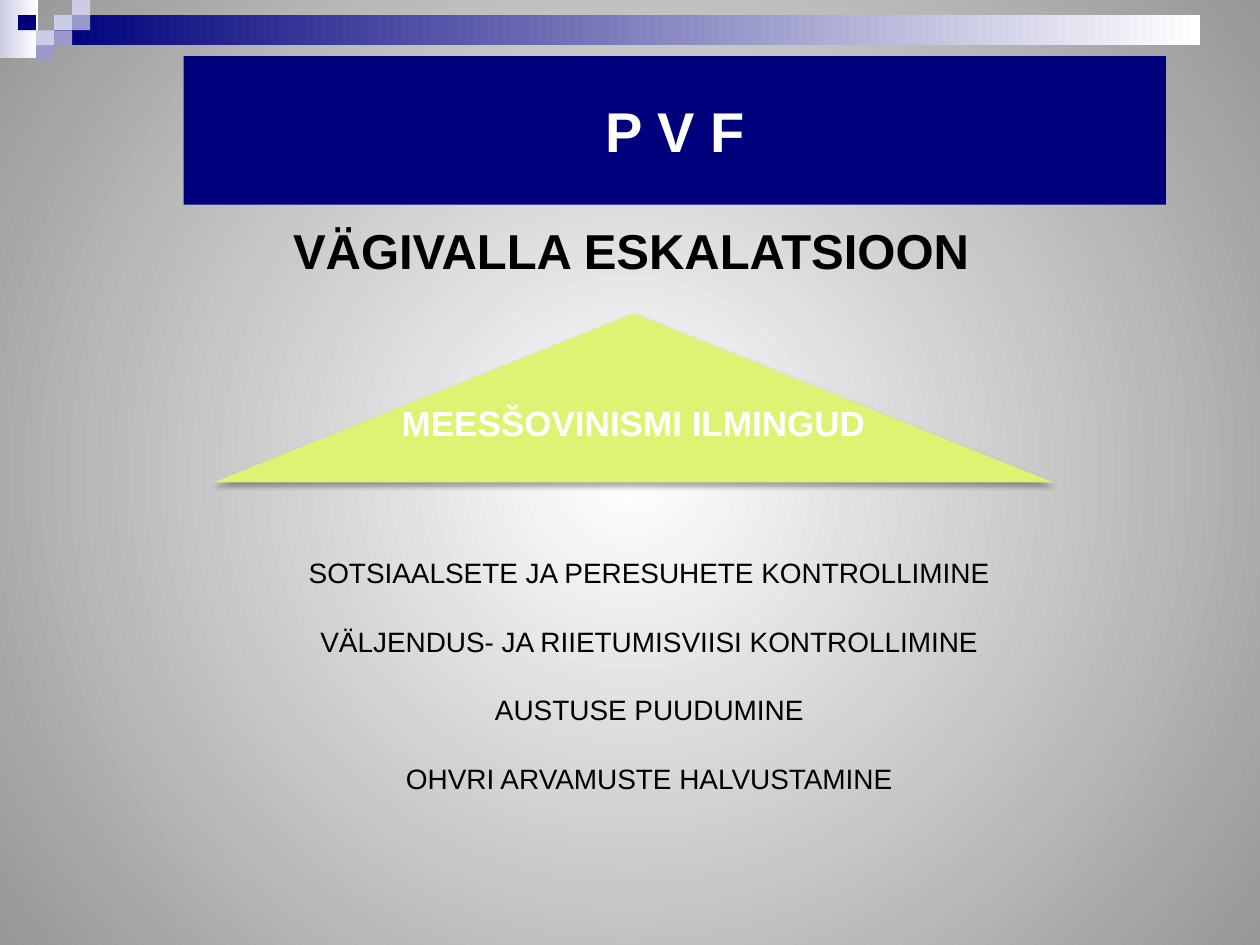
from dataclasses import dataclass

from lxml.etree import SubElement
from pptx import Presentation
from pptx.dml.color import RGBColor
from pptx.enum.shapes import MSO_SHAPE as Preset
from pptx.enum.text import MSO_ANCHOR as Anchor, PP_ALIGN as Align
from pptx.oxml.ns import qn
from pptx.util import Pt


@dataclass(frozen=True)
class Theme:
    font: str = "Arial"
    navy: str = "00007D"
    violet: str = "9999CC"
    lavender: str = "CCCCE6"
    lime: str = "DEF373"
    white: str = "FFFFFF"
    black: str = "000000"
    gray: str = "979797"
    title_size: float = 32
    subtitle_size: float = 28
    label_size: float = 20
    body_size: float = 16


@dataclass(frozen=True)
class Box:
    left: float
    top: float
    width: float
    height: float

    def lengths(self) -> tuple:
        return tuple(Pt(v) for v in (self.left, self.top, self.width, self.height))


@dataclass(frozen=True)
class Square:
    column: int
    row: int
    color: str


@dataclass(frozen=True)
class TextStyle:
    size: float
    color: str
    bold: bool = False
    anchor: Anchor = Anchor.TOP
    gap: float = 0
    top_inset: float = 3.6


THEME = Theme()
SLIDE_WIDTH, SLIDE_HEIGHT = 720, 540
SQUARE_WIDTH, SQUARE_HEIGHT = 10.3, 8.64

CORNER_BAND = Box(0, 0, 21.6, 33.1)
TOP_BAND = Box(31, 8.64, 655, 17.28)
SQUARES = (
    Square(3, 1, THEME.lavender),
    Square(4, 0, THEME.lavender),
    Square(4, 1, THEME.violet),
    Square(2, 2, THEME.lavender),
    Square(1, 1, THEME.navy),
    Square(3, 2, THEME.violet),
    Square(2, 3, THEME.violet),
)

TITLE_BOX = Box(105, 32, 561.3, 85)
SUBTITLE_BOX = Box(36.6, 122.4, 648, 46)
PYRAMID_BOX = Box(122, 179.2, 480, 96.5)
SIGNS_BOX = Box(127.4, 314, 487.4, 143.3)
SIGNS = (
    "SOTSIAALSETE JA PERESUHETE KONTROLLIMINE",
    "VÄLJENDUS- JA RIIETUMISVIISI KONTROLLIMINE",
    "AUSTUSE PUUDUMINE",
    "OHVRI ARVAMUSTE HALVUSTAMINE",
)


def rgb(color: str) -> RGBColor:
    return RGBColor.from_string(color)


def set_gradient(fill, start: str, end: str) -> None:
    fill.gradient()
    fill.gradient_angle = 0
    for stop, color, position in zip(fill.gradient_stops, (start, end), (0, 1)):
        stop.color.rgb = rgb(color)
        stop.position = position


def set_background(slide) -> None:
    """Radial gradient, lightest at the centre of the slide."""
    set_gradient(slide.background.fill, THEME.white, THEME.gray)
    gradient = slide.element.find(".//" + qn("a:gradFill"))
    gradient.remove(gradient.find(qn("a:lin")))
    circle = SubElement(gradient, qn("a:path"), {"path": "circle"})
    SubElement(circle, qn("a:fillToRect"), dict.fromkeys("ltrb", "50000"))


def add_shape(slide, box: Box, color: str, preset: Preset = Preset.RECTANGLE):
    shape = slide.shapes.add_shape(preset, *box.lengths())
    shape.shadow.inherit = False
    shape.fill.solid()
    shape.fill.fore_color.rgb = rgb(color)
    shape.line.fill.background()
    return shape


def add_band(slide, box: Box, start: str) -> None:
    band = add_shape(slide, box, start)
    set_gradient(band.fill, start, THEME.white)


def add_square(slide, square: Square) -> None:
    box = Box(square.column * SQUARE_WIDTH, square.row * SQUARE_HEIGHT,
              SQUARE_WIDTH, SQUARE_HEIGHT)
    add_shape(slide, box, square.color)


def write(shape, lines: tuple[str, ...], style: TextStyle) -> None:
    frame = shape.text_frame
    frame.word_wrap = True
    frame.vertical_anchor = style.anchor
    frame.margin_top = Pt(style.top_inset)
    for index, line in enumerate(lines):
        paragraph = frame.add_paragraph() if index else frame.paragraphs[0]
        paragraph.alignment = Align.CENTER
        if index:
            paragraph.space_before = Pt(style.gap)
        run = paragraph.add_run()
        run.text = line
        run.font.name = THEME.font
        run.font.size = Pt(style.size)
        run.font.bold = style.bold
        run.font.color.rgb = rgb(style.color)


def add_text(slide, box: Box, lines: tuple[str, ...], style: TextStyle) -> None:
    write(slide.shapes.add_textbox(*box.lengths()), lines, style)


def add_pyramid(slide, box: Box) -> None:
    """Trapezoid whose sides meet at the top, with a soft shadow below."""
    pyramid = add_shape(slide, box, THEME.lime, Preset.TRAPEZOID)
    pyramid.adjustments[0] = box.width / 2 / box.height
    effects = pyramid.element.spPr.find(qn("a:effectLst"))
    shadow = SubElement(effects, qn("a:outerShdw"), {
        "blurRad": str(Pt(3.1)), "dist": str(Pt(1.8)),
        "dir": "5400000", "rotWithShape": "0"})
    color = SubElement(shadow, qn("a:srgbClr"), {"val": THEME.black})
    SubElement(color, qn("a:alpha"), {"val": "35000"})


def main() -> None:
    presentation = Presentation()
    presentation.slide_width = Pt(SLIDE_WIDTH)
    presentation.slide_height = Pt(SLIDE_HEIGHT)
    slide = presentation.slides.add_slide(presentation.slide_layouts[6])

    set_background(slide)
    add_band(slide, CORNER_BAND, THEME.lavender)
    add_band(slide, TOP_BAND, THEME.navy)
    for square in SQUARES:
        add_square(slide, square)

    write(add_shape(slide, TITLE_BOX, THEME.navy), ("P V F",),
          TextStyle(THEME.title_size, THEME.white, True, Anchor.MIDDLE))
    add_text(slide, SUBTITLE_BOX, ("VÄGIVALLA ESKALATSIOON",),
             TextStyle(THEME.subtitle_size, THEME.black, True))
    add_pyramid(slide, PYRAMID_BOX)
    add_text(slide, PYRAMID_BOX, ("MEESŠOVINISMI ILMINGUD",),
             TextStyle(THEME.label_size, THEME.white, True, Anchor.MIDDLE,
                       top_inset=32))
    add_text(slide, SIGNS_BOX, SIGNS,
             TextStyle(THEME.body_size, THEME.black, gap=20))

    presentation.save("out.pptx")


if __name__ == "__main__":
    main()
